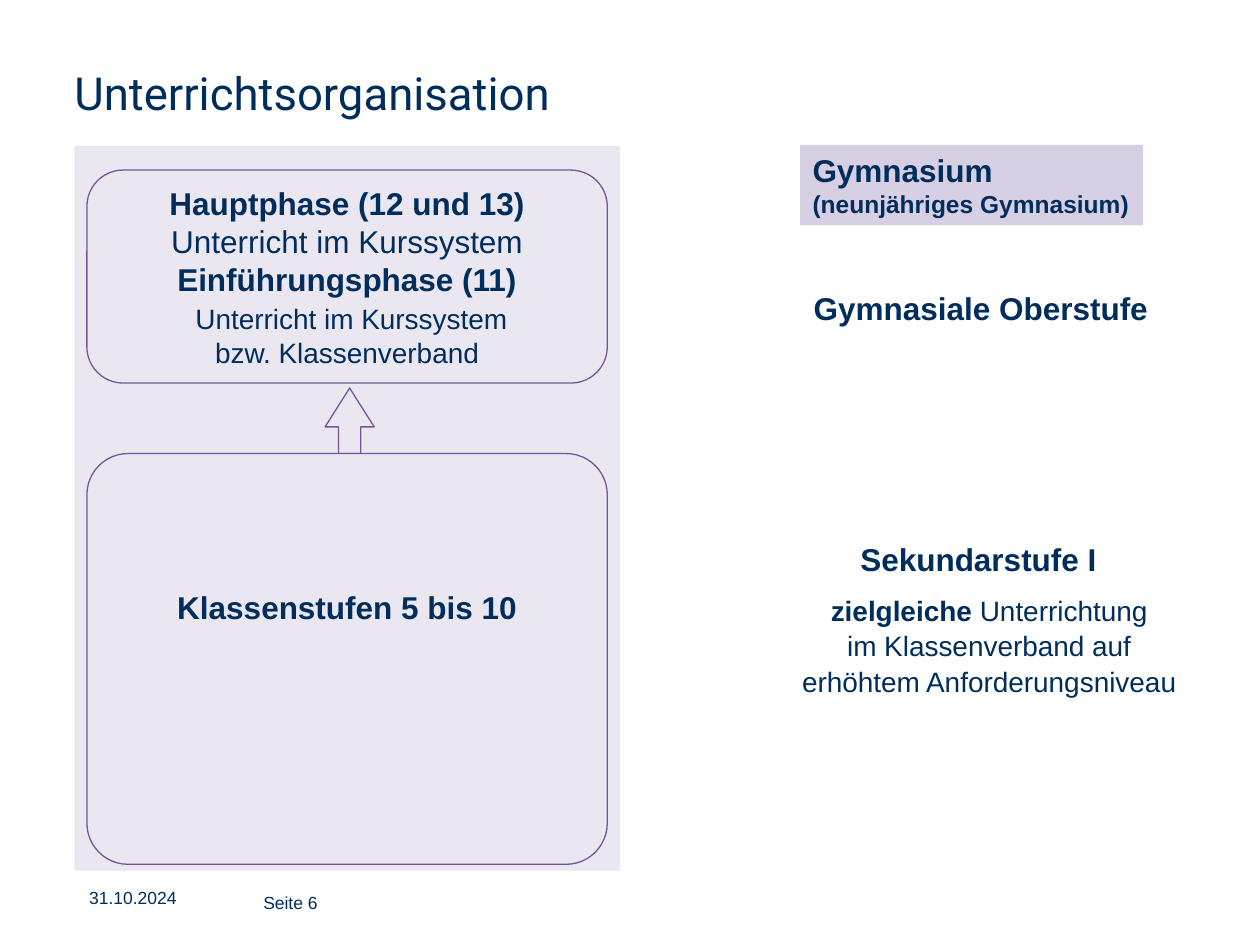
from dataclasses import dataclass

from pptx import Presentation
from pptx.dml.color import RGBColor
from pptx.enum.shapes import MSO_SHAPE
from pptx.enum.text import MSO_ANCHOR, PP_ALIGN
from pptx.util import Inches, Pt


@dataclass(frozen=True)
class Theme:
    navy: RGBColor = RGBColor(0x00, 0x2D, 0x5B)
    panel: RGBColor = RGBColor(0xEB, 0xE7, 0xF1)
    label: RGBColor = RGBColor(0xD7, 0xCF, 0xE4)
    outline: RGBColor = RGBColor(0x72, 0x58, 0x9A)
    body_font: str = "Arial"
    title_font: str = "Roboto"
    title: int = 26
    heading: int = 18
    body: int = 16
    note: int = 14
    footer: int = 10


class SlideBuilder:
    def __init__(self, slide, theme):
        self.slide = slide
        self.theme = theme

    def shape(self, kind, box, fill, outlined=False, adjustments=()):
        shape = self.slide.shapes.add_shape(kind, *map(Inches, box))
        shape.shadow.inherit = False
        shape.fill.solid()
        shape.fill.fore_color.rgb = fill
        if outlined:
            shape.line.color.rgb = self.theme.outline
            shape.line.width = Pt(0.75)
        else:
            shape.line.fill.background()
        for index, value in enumerate(adjustments):
            shape.adjustments[index] = value
        return shape

    def text(self, box, paragraphs, margins=(0.1, 0.05), wrap=False,
             anchor=MSO_ANCHOR.TOP, **style):
        holder = self.slide.shapes.add_textbox(*map(Inches, box))
        frame = holder.text_frame
        frame.margin_left = frame.margin_right = Inches(margins[0])
        frame.margin_top = frame.margin_bottom = Inches(margins[1])
        self.fill_text(holder, paragraphs, wrap, anchor, **style)

    def fill_text(self, holder, paragraphs, wrap=False, anchor=MSO_ANCHOR.TOP,
                  align=PP_ALIGN.LEFT, spacing=None, font=None):
        """Each paragraph is (runs, size, bold); a run is text or (text, bold, size)."""
        frame = holder.text_frame
        frame.word_wrap = wrap
        frame.vertical_anchor = anchor
        for index, (runs, size, bold) in enumerate(paragraphs):
            paragraph = frame.paragraphs[0] if index == 0 else frame.add_paragraph()
            paragraph.alignment = align
            if spacing:
                paragraph.line_spacing = spacing
            paragraph.font.name = font or self.theme.body_font
            paragraph.font.size = Pt(size)
            paragraph.font.bold = bold
            paragraph.font.color.rgb = self.theme.navy
            for part in [runs] if isinstance(runs, str) else runs:
                run = paragraph.add_run()
                if isinstance(part, str):
                    run.text = part
                else:
                    run.text, run.font.bold, run_size = part
                    run.font.size = Pt(run_size)


def main():
    presentation = Presentation()
    presentation.slide_width = Inches(10)
    presentation.slide_height = Inches(7.5)
    theme = Theme()
    page = SlideBuilder(
        presentation.slides.add_slide(presentation.slide_layouts[6]), theme)

    # Footer
    page.text((2.09, 7.04, 1.26, 0.24), [("Seite 6", theme.footer, False)],
              margins=(0, 0), wrap=True, anchor=MSO_ANCHOR.MIDDLE)
    page.text((0.61, 6.99, 0.94, 0.27), [("31.10.2024", theme.footer, False)])

    # Stages on the left: lower stage leads up to the upper stage
    page.shape(MSO_SHAPE.RECTANGLE, (0.59, 1.16, 4.33, 5.75), theme.panel)
    page.shape(MSO_SHAPE.UP_ARROW, (2.58, 3.08, 0.39, 0.52), theme.panel,
               outlined=True, adjustments=(0.45, 0.79))
    lower_stage = page.shape(MSO_SHAPE.ROUNDED_RECTANGLE, (0.69, 3.6, 4.13, 3.26),
                             theme.panel, outlined=True, adjustments=(0.1,))
    lower_stage.text_frame.margin_top = Inches(0.97)
    page.fill_text(lower_stage, [("Klassenstufen 5 bis 10", theme.heading, True)],
                   align=PP_ALIGN.CENTER)
    upper_stage = page.shape(MSO_SHAPE.ROUNDED_RECTANGLE, (0.69, 1.35, 4.13, 1.69),
                             theme.panel, outlined=True, adjustments=(0.17,))
    page.fill_text(upper_stage, [
        ("Hauptphase (12 und 13)", theme.heading, True),
        ("Unterricht im Kurssystem", theme.heading, False),
        ("Einführungsphase (11)", theme.heading, True),
        ([(" ", True, theme.heading), "Unterricht im Kurssystem"], theme.body, False),
        ("bzw. Klassenverband", theme.body, False),
    ], anchor=MSO_ANCHOR.MIDDLE, align=PP_ALIGN.CENTER)

    # School type and explanations on the right
    school_type = page.shape(MSO_SHAPE.RECTANGLE, (6.35, 1.15, 2.72, 0.64), theme.label)
    page.fill_text(school_type, [("Gymnasium", theme.heading, True),
                                 ("(neunjähriges Gymnasium)", theme.note, True)])
    page.text((6.19, 4.65, 3.32, 0.95), [
        ([("zielgleiche", True, theme.body), " Unterrichtung"], theme.body, False),
        ("im Klassenverband auf", theme.body, False),
        ("erhöhtem Anforderungsniveau", theme.body, False),
    ], align=PP_ALIGN.CENTER, spacing=1.05)
    for box, stage in (((6.73, 4.22, 2.14, 0.4), "Sekundarstufe I"),
                       ((6.36, 2.23, 2.87, 0.4), "Gymnasiale Oberstufe")):
        page.text(box, [(stage, theme.heading, True)], spacing=1.05)

    # Title
    page.text((0.59, 0.58, 8.82, 0.89),
              [("Unterrichtsorganisation", theme.title, False)],
              margins=(0, 0), wrap=True, spacing=0.85, font=theme.title_font)

    presentation.save("out.pptx")


if __name__ == "__main__":
    main()
